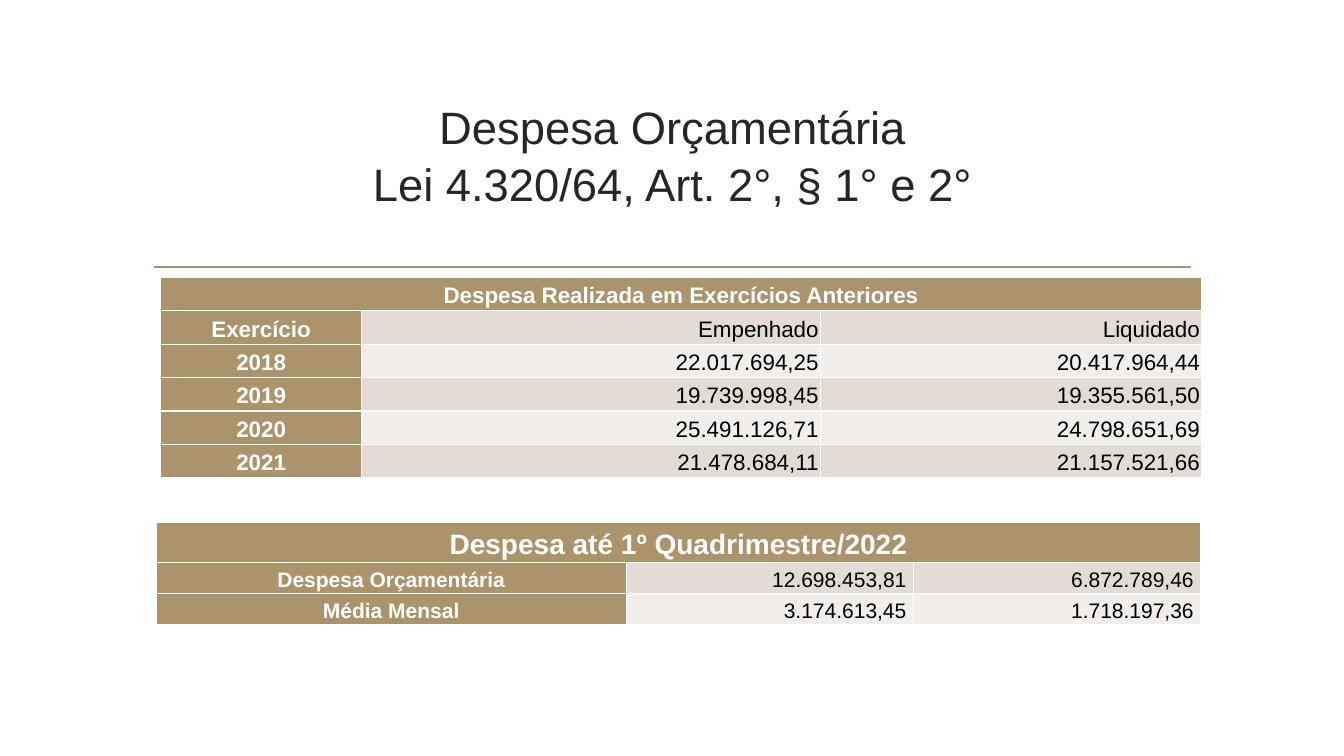
from lxml import etree
from pptx import Presentation
from pptx import util as u
from pptx.dml.color import RGBColor
from pptx.enum import shapes, text
from pptx.oxml.ns import qn

COLORS = {"gold": "AB946B", "dark_band": "E2DCD4", "light_band": "F1EEEB",
          "title": "262626", "white": "FFFFFF", "black": "000000"}
FONT = "Arial"

presentation = Presentation()
presentation.slide_width = u.Inches(13.33)
presentation.slide_height = u.Inches(7.5)
slide = presentation.slides.add_slide(presentation.slide_layouts[6])

# Grid of 100 columns by 100 rows
COLUMN = presentation.slide_width / 100
ROW = presentation.slide_height / 100


def add_run(paragraph, words, size, color, bold=False):
    run = paragraph.add_run()
    run.text = words
    run.font.name = FONT
    run.font.size = u.Pt(size)
    run.font.bold = bold
    run.font.color.rgb = RGBColor.from_string(COLORS[color])


def add_expense_table(left, top, columns, rows, records, sizes, margins):
    """Add a table, in grid units, whose first record is a merged heading."""
    table = slide.shapes.add_table(
        len(rows), len(columns), int(left * COLUMN), int(top * ROW),
        int(sum(columns) * COLUMN), int(sum(rows) * ROW)).table
    table.first_col = True
    for column, width in zip(table.columns, columns):
        column.width = int(width * COLUMN)
    for row, height in zip(table.rows, rows):
        row.height = int(height * ROW)
    table.cell(0, 0).merge(table.cell(0, len(columns) - 1))

    for i, record in enumerate(records):
        for j, words in enumerate(record):
            cell = table.cell(i, j)
            heading = j == 0
            band = "dark_band" if i % 2 else "light_band"
            cell.fill.solid()
            cell.fill.fore_color.rgb = RGBColor.from_string(COLORS["gold" if heading else band])
            cell.vertical_anchor = text.MSO_ANCHOR.MIDDLE
            cell.margin_left = cell.margin_right = u.Inches(margins[0])
            cell.margin_top = cell.margin_bottom = u.Inches(margins[1])
            paragraph = cell.text_frame.paragraphs[0]
            paragraph.alignment = text.PP_ALIGN.CENTER if heading else text.PP_ALIGN.RIGHT
            paragraph.line_spacing = 1.15
            add_run(paragraph, words, sizes[0] if i == 0 else sizes[1],
                    "white" if heading else "black", bold=heading)


# Rule under the title
rule = slide.shapes.add_connector(
    shapes.MSO_CONNECTOR.STRAIGHT, int(11.48 * COLUMN), int(35.33 * ROW),
    int(88.6 * COLUMN), int(35.33 * ROW))
rule.line.color.rgb = RGBColor.from_string(COLORS["gold"])
rule.line.width = u.Pt(1.25)
etree.SubElement(rule._element.spPr, qn("a:effectLst"))

# Title
title = slide.shapes.add_textbox(
    int(10.65 * COLUMN), int(14.27 * ROW), int(78.77 * COLUMN), int(19.07 * ROW))
frame = title.text_frame
frame.word_wrap = True
frame.vertical_anchor = text.MSO_ANCHOR.MIDDLE
frame.margin_top = 0
frame.margin_bottom = int(7 * ROW)
paragraph = frame.paragraphs[0]
paragraph.alignment = text.PP_ALIGN.CENTER
paragraph.line_spacing = 1.05
add_run(paragraph, "Despesa Orçamentária", 32.4, "title")
paragraph.add_line_break()
add_run(paragraph, "Lei 4.320/64, Art. 2°, § 1° e 2°", 32.4, "title")

# Earlier years
add_expense_table(
    left=11.93, top=36.67, columns=[15, 34.13, 28.36], rows=[4.43] * 6,
    records=[
        ["Despesa Realizada em Exercícios Anteriores"],
        ["Exercício", "Empenhado", "Liquidado"],
        ["2018", "22.017.694,25", "20.417.964,44"],
        ["2019", "19.739.998,45", "19.355.561,50"],
        ["2020", "25.491.126,71", "24.798.651,69"],
        ["2021", "21.478.684,11", "21.157.521,66"],
    ],
    sizes=(16, 16), margins=(0.02, 0))

# Current year
add_expense_table(
    left=11.63, top=69.07, columns=[34.96, 21.38, 21.38], rows=[5.2, 3.93, 3.93],
    records=[
        ["Despesa até 1º Quadrimestre/2022"],
        ["Despesa Orçamentária", "12.698.453,81", "6.872.789,46"],
        ["Média Mensal", "3.174.613,45", "1.718.197,36"],
    ],
    sizes=(20, 15), margins=(0.07, 0.01))

presentation.save("out.pptx")
